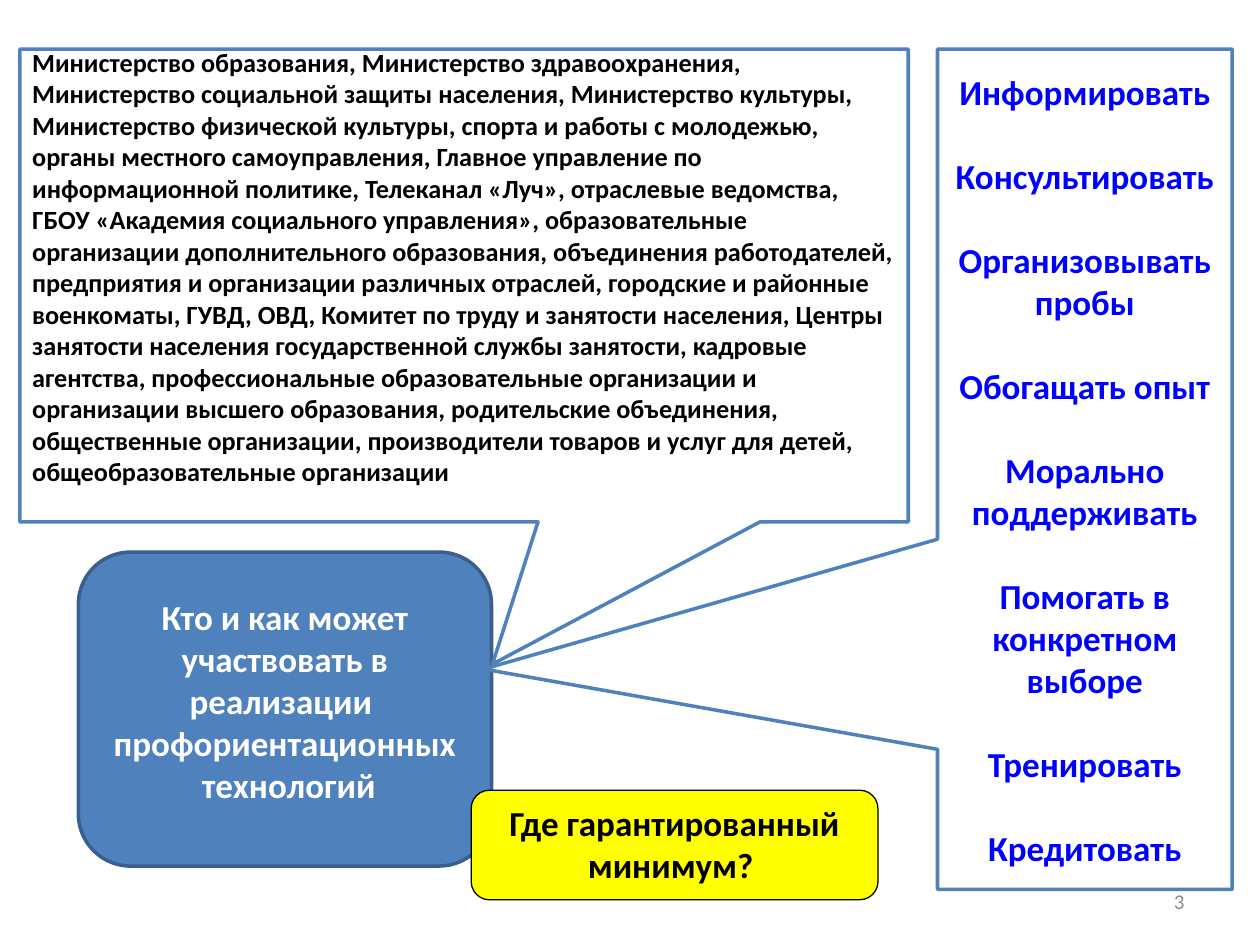
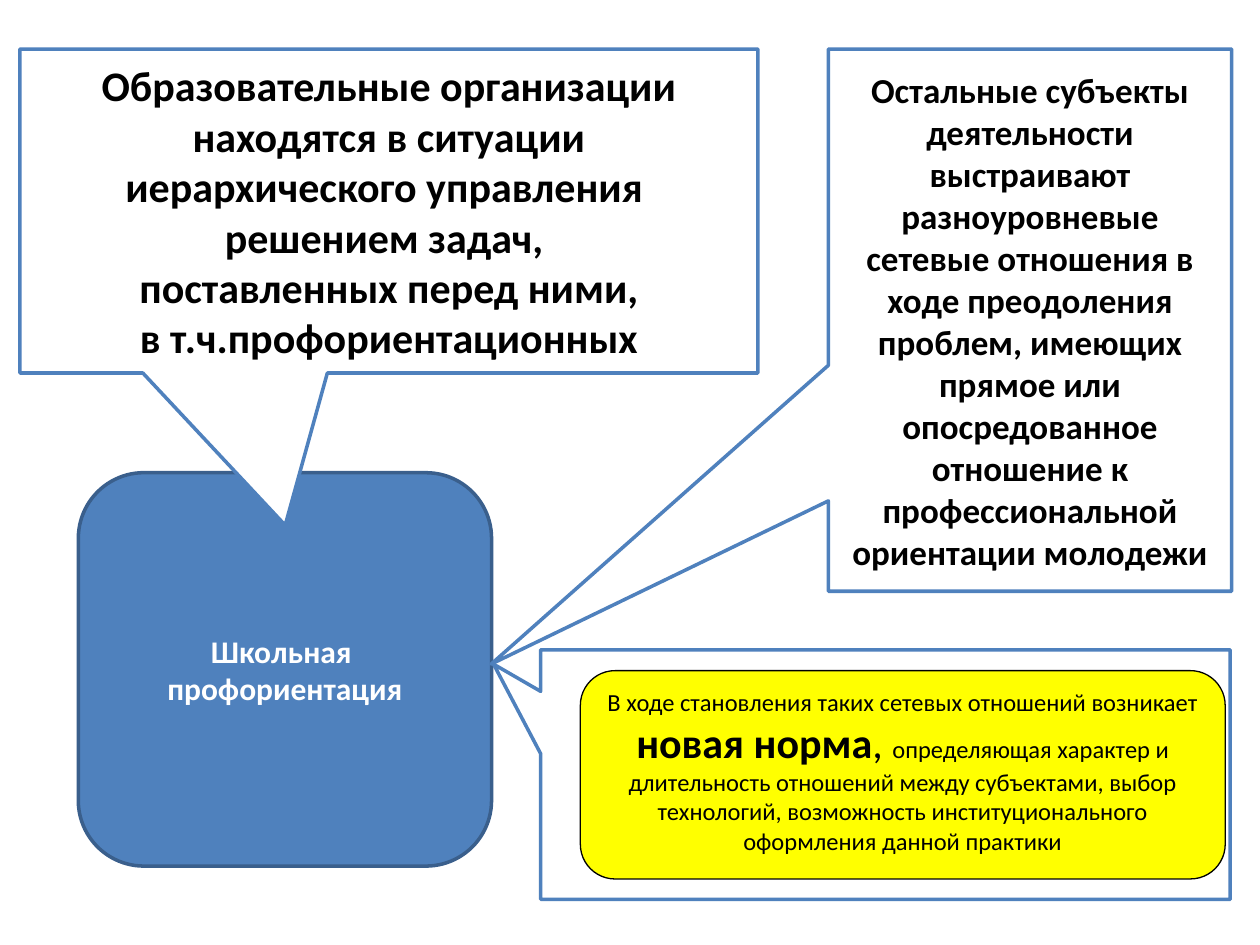
from pptx import Presentation
from pptx.dml.color import RGBColor
from pptx.enum.shapes import MSO_SHAPE
from pptx.enum.text import MSO_ANCHOR, PP_ALIGN
from pptx.util import Cm, Pt

ROUND, WEDGE = MSO_SHAPE.ROUNDED_RECTANGLE, MSO_SHAPE.RECTANGULAR_CALLOUT
TOP, MIDDLE = MSO_ANCHOR.TOP, MSO_ANCHOR.MIDDLE
LEFT, CENTER, RIGHT = PP_ALIGN.LEFT, PP_ALIGN.CENTER, PP_ALIGN.RIGHT

BLUE = RGBColor(0x4F, 0x81, 0xBD)
NAVY = RGBColor(0x3A, 0x5F, 0x8C)
BRIGHT = RGBColor(0x00, 0x00, 0xFF)
YELLOW = RGBColor(0xFF, 0xFF, 0x00)
GREY = RGBColor(0x8C, 0x8C, 0x8C)
WHITE = RGBColor(0xFF, 0xFF, 0xFF)
BLACK = RGBColor(0x00, 0x00, 0x00)
FONT = "Calibri"

EDGE, HEAD = 0.4, 0.99        # left and top of the upper callouts
HUB_X, HUB_W = 1.58, 8.33
HUB_END = 17.46               # bottom of the blue box

BODIES = [
    "Министерство образования, Министерство здравоохранения, Министерство "
    "социальной защиты населения, Министерство культуры,",
    "Министерство физической культуры, спорта и работы с молодежью, органы "
    "местного самоуправления, Главное управление по информационной политике, "
    "Телеканал «Луч», отраслевые ведомства, ГБОУ «Академия социального "
    "управления», образовательные организации дополнительного образования, "
    "объединения работодателей, предприятия и организации различных отраслей, "
    "городские и районные военкоматы, ГУВД, ОВД, Комитет по труду и занятости "
    "населения, Центры занятости населения государственной службы занятости, "
    "кадровые агентства, профессиональные образовательные организации и "
    "организации высшего образования, родительские объединения, общественные "
    "организации, производители товаров и услуг для детей, "
    "общеобразовательные организации",
]
DEEDS = [
    "Информировать", "Консультировать", "Организовывать пробы",
    "Обогащать опыт", "Морально поддерживать",
    "Помогать в конкретном выборе", "Тренировать", "Кредитовать",
]
ASK = ["Кто и как может участвовать в", "реализации ",
       "профориентационных", " технологий"]
SCHOOLS = [
    "Образовательные организации", "находятся в ситуации",
    "иерархического управления ", "решением задач, ",
    "поставленных перед ними,", "в т.ч.профориентационных",
]
OTHERS = [
    "Остальные субъекты деятельности выстраивают разноуровневые сетевые "
    "отношения в ходе преодоления проблем, имеющих прямое или "
    "опосредованное отношение к профессиональной ориентации молодежи",
]
NORM = [[
    ("В ходе становления таких сетевых отношений возникает ", 14, False),
    ("новая норма", 24, True),
    (", ", 24, False),
    ("определяющая характер и длительность отношений между субъектами, "
     "выбор технологий, возможность институционального оформления данной "
     "практики", 14, False),
]]


def write(shape, paras, size, color, bold=True, align=CENTER,
          anchor=MIDDLE, gap=0):
    """Fill a shape; a paragraph is a string or a list of (text, size, bold)."""
    frame = shape.text_frame
    frame.word_wrap = True
    frame.vertical_anchor = anchor
    for i, item in enumerate(paras):
        para = frame.add_paragraph() if i else frame.paragraphs[0]
        para.alignment = align
        para.space_before = Pt(gap if i else 0)
        runs = [(item, size, bold)] if isinstance(item, str) else item
        for text, points, heavy in runs:
            run = para.add_run()
            run.text = text
            font = run.font
            font.name, font.size, font.bold = FONT, Pt(points), heavy
            font.color.rgb = color


def draw(slide, kind, box, fill, line, width):
    shape = slide.shapes.add_shape(kind, *map(Cm, box))
    shape.shadow.inherit = False
    shape.fill.solid()
    shape.fill.fore_color.rgb = fill
    shape.line.color.rgb = line
    shape.line.width = Pt(width)
    return shape


def hub(slide, top, paras, size):
    """Blue box that the callouts point at."""
    box = (HUB_X, top, HUB_W, HUB_END - top)
    shape = draw(slide, ROUND, box, BLUE, NAVY, 2)
    write(shape, paras, size, WHITE)
    return shape


def callout(slide, box, tip):
    """White callout whose pointer ends at the slide point tip."""
    shape = draw(slide, WEDGE, box, WHITE, BLUE, 2)
    for i in range(2):
        start, span = box[i], box[i + 2]
        shape.adjustments[i] = (tip[i] - start) / span - 0.5
    return shape


def note(slide, box, paras):
    shape = draw(slide, ROUND, box, YELLOW, BLACK, 0.75)
    write(shape, paras, 20, BLACK, anchor=TOP)


def number(slide, text):
    box = slide.shapes.add_textbox(Cm(18.21), Cm(17.65), Cm(5.92), Cm(1.02))
    write(box, [text], 12, GREY, bold=False, align=RIGHT)


def people(slide):
    ask = hub(slide, 11.13, ASK, 20)
    ask.text_frame.margin_bottom = Cm(0.46)
    bodies = callout(slide, (EDGE, HEAD, 17.91, 9.53), (9.93, 13.39))
    bodies.text_frame.margin_top = Cm(-0.06)
    write(bodies, BODIES, 15, BLACK, align=LEFT, anchor=TOP)
    number(slide, "3")
    deeds = callout(slide, (18.9, HEAD, 5.94, 16.94), (9.75, 13.49))
    write(deeds, DEEDS, 20, BRIGHT, gap=24)
    note(slide, (9.5, 15.93, 8.2, 2.21), ["Где гарантированный минимум? "])


def school(slide):
    hub(slide, 9.53, ["Школьная ", "профориентация"], 18)
    schools = callout(slide, (EDGE, HEAD, 14.88, 6.53), (5.75, 10.59))
    write(schools, SCHOOLS, 24, BLACK)
    callout(slide, (10.9, 13.1, 13.9, 5.03), (9.95, 13.39))
    others = callout(slide, (16.7, HEAD, 8.13, 10.93), (9.9, 13.39))
    write(others, OTHERS, 20, BLACK)
    note(slide, (11.7, 13.52, 13, 4.2), NORM)


def main():
    deck = Presentation()
    deck.slide_width, deck.slide_height = Cm(25.4), Cm(19.05)
    for build in (people, school):
        build(deck.slides.add_slide(deck.slide_layouts[6]))
    deck.save("out.pptx")


if __name__ == "__main__":
    main()
